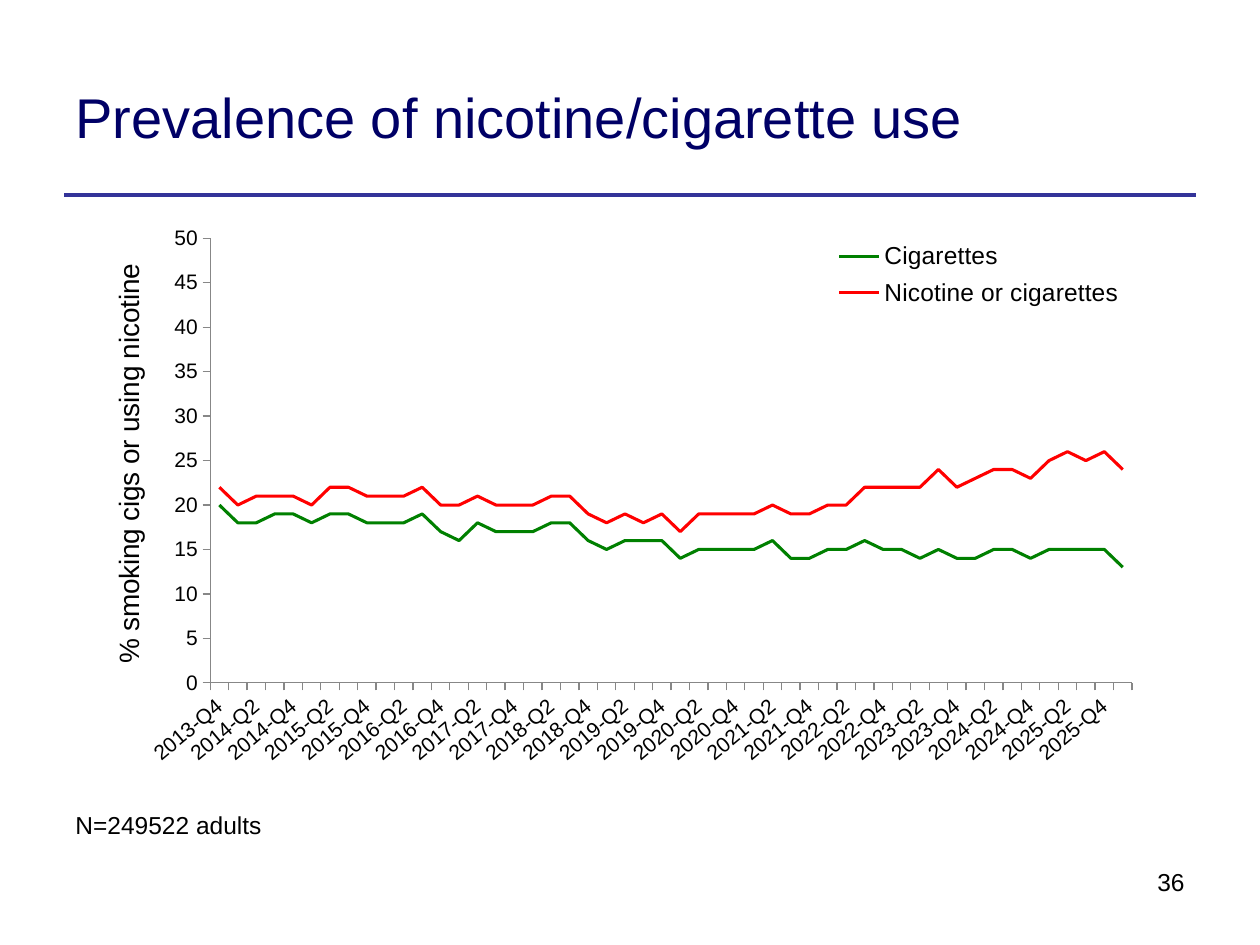
import lxml.etree
import pptx
import pptx.chart.data
import pptx.dml.color
import pptx.enum.chart
import pptx.enum.shapes
import pptx.enum.text
import pptx.oxml.ns
import pptx.util

Cm = pptx.util.Cm
Pt = pptx.util.Pt
qn = pptx.oxml.ns.qn
Align = pptx.enum.text.PP_ALIGN
Anchor = pptx.enum.text.MSO_ANCHOR


class Theme:
    font = "Arial"
    navy = "000066"
    rule = "333399"
    black = "000000"
    grey = "878787"
    green = "008000"
    red = "FF0000"
    title = 32
    label = 16
    body = 14
    tick = 12


def tint(code):
    return pptx.dml.color.RGBColor.from_string(code)


def style(font, size, color=Theme.black):
    font.name = Theme.font
    font.size = Pt(size)
    font.bold = False
    font.color.rgb = tint(color)


def place(parent, after, box, inner=False):
    for old in parent.findall(qn("c:layout")):
        parent.remove(old)
    layout = lxml.etree.Element(qn("c:layout"))
    manual = lxml.etree.SubElement(layout, qn("c:manualLayout"))
    items = [("layoutTarget", "inner")] if inner else []
    items += [("xMode", "edge"), ("yMode", "edge")]
    items += zip("xywh", box)
    for tag, value in items:
        lxml.etree.SubElement(manual, qn("c:" + tag)).set("val", str(value))
    spot = 0 if after is None else parent.index(parent.find(qn(after))) + 1
    parent.insert(spot, layout)


class Deck:
    def __init__(self):
        self.show = pptx.Presentation()
        self.show.slide_width = Cm(25.4)
        self.show.slide_height = Cm(19.05)
        self.slide = self.show.slides.add_slide(self.show.slide_layouts[6])

    def line(self, left, top, right, bottom, color, width):
        line = self.slide.shapes.add_connector(
            pptx.enum.shapes.MSO_CONNECTOR.STRAIGHT,
            Cm(left), Cm(top), Cm(right), Cm(bottom))
        line.line.color.rgb = tint(color)
        line.line.width = Pt(width)
        lxml.etree.SubElement(line._element.spPr, qn("a:effectLst"))

    def text(self, words, box, size, color=Theme.black, align=Align.LEFT,
             anchor=Anchor.TOP, wrap=True):
        frame = self.slide.shapes.add_textbox(*map(Cm, box)).text_frame
        frame.word_wrap = wrap
        frame.vertical_anchor = anchor
        frame.text = words
        para = frame.paragraphs[0]
        para.alignment = align
        style(para.runs[0].font, size, color)

    def chart(self, box, names, series, label):
        data = pptx.chart.data.CategoryChartData()
        data.categories = names
        for name, values, color in series:
            data.add_series(name, values)
        chart = self.slide.shapes.add_chart(
            pptx.enum.chart.XL_CHART_TYPE.LINE, *map(Cm, box), data).chart
        style(chart.font, Theme.body)
        chart.has_title = False
        plot = chart.plots[0]
        plot.vary_by_categories = False
        for line, (name, values, color) in zip(plot.series, series):
            line.smooth = False
            line.marker.style = pptx.enum.chart.XL_MARKER_STYLE.NONE
            line.format.line.color.rgb = tint(color)
            line.format.line.width = Pt(1.75)
        self.axes(chart, label)
        self.legend(chart)
        area = chart._chartSpace.chart.plotArea
        place(area, None, (0.132, 0.037, 0.813, 0.713), inner=True)

    def axes(self, chart, label):
        for axis in (chart.category_axis, chart.value_axis):
            axis.has_major_gridlines = False
            axis.major_tick_mark = pptx.enum.chart.XL_TICK_MARK.OUTSIDE
            axis.format.line.color.rgb = tint(Theme.grey)
            style(axis.tick_labels.font, Theme.tick)
        body = chart.category_axis._element.find(qn("c:txPr")).find(qn("a:bodyPr"))
        body.set("rot", "-2400000")
        scale = chart.value_axis
        scale.minimum_scale = 0
        scale.maximum_scale = 50
        scale.major_unit = 5
        title = scale.axis_title
        title.text_frame.text = label
        style(title.text_frame.paragraphs[0].runs[0].font, Theme.label)
        title.text_frame._txBody.find(qn("a:bodyPr")).set("rot", "-5400000")
        place(title._element, "c:tx", (0.04, 0.07))

    def legend(self, chart):
        chart.has_legend = True
        key = chart.legend
        key.position = pptx.enum.chart.XL_LEGEND_POSITION.RIGHT
        key.include_in_layout = False
        style(key.font, Theme.body)
        place(key._element, "c:legendPos", (0.66, 0.03, 0.3, 0.13))

    def save(self):
        self.show.save("out.pptx")


def main():
    first, count = 2013 * 4 + 3, 50
    quarters = [f"{n // 4}-Q{n % 4 + 1}" for n in range(first, first + count)]
    smoke = [20, 18, 18, 19, 19, 18, 19, 19, 18, 18, 18, 19, 17, 16, 18, 17, 17,
             17, 18, 18, 16, 15, 16, 16, 16, 14, 15, 15, 15, 15, 16, 14, 14, 15,
             15, 16, 15, 15, 14, 15, 14, 14, 15, 15, 14, 15, 15, 15, 15, 13]
    either = [22, 20, 21, 21, 21, 20, 22, 22, 21, 21, 21, 22, 20, 20, 21, 20, 20,
              20, 21, 21, 19, 18, 19, 18, 19, 17, 19, 19, 19, 19, 20, 19, 19, 20,
              20, 22, 22, 22, 22, 24, 22, 23, 24, 24, 23, 25, 26, 25, 26, 24]
    deck = Deck()
    deck.line(1.3, 3.94, 24.1, 3.94, Theme.rule, 2.25)
    deck.text("Prevalence of nicotine/cigarette use", (1.27, 0.76, 20.04, 3.18),
              Theme.title, Theme.navy, anchor=Anchor.MIDDLE)
    deck.text("36", (17.09, 17.35, 7.04, 1.32), Theme.body, align=Align.RIGHT)
    deck.chart((1.22, 4.34, 22.86, 12.57), quarters,
               [("Cigarettes", smoke, Theme.green),
                ("Nicotine or cigarettes", either, Theme.red)],
               "% smoking cigs or using nicotine")
    deck.text("N=249522 adults", (1.27, 16.2, 4.29, 0.86), Theme.body, wrap=False)
    deck.save()


if __name__ == "__main__":
    main()
